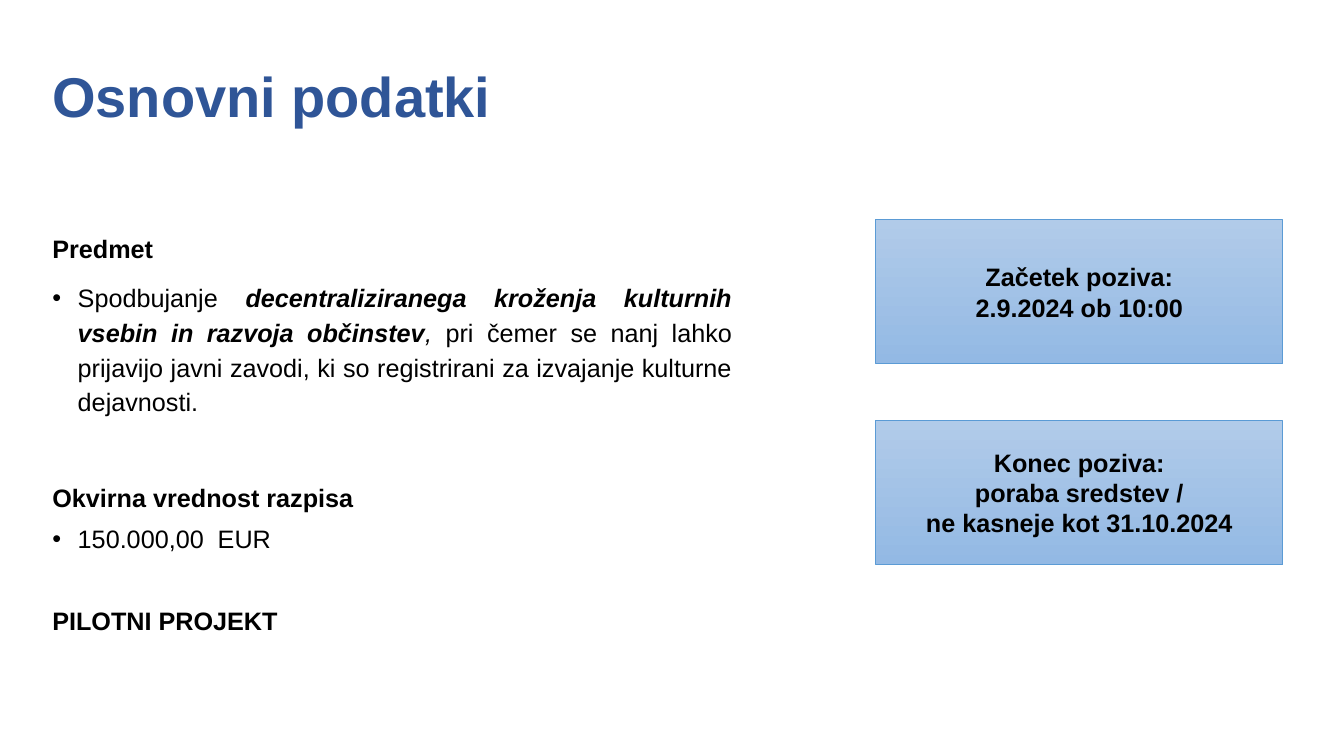
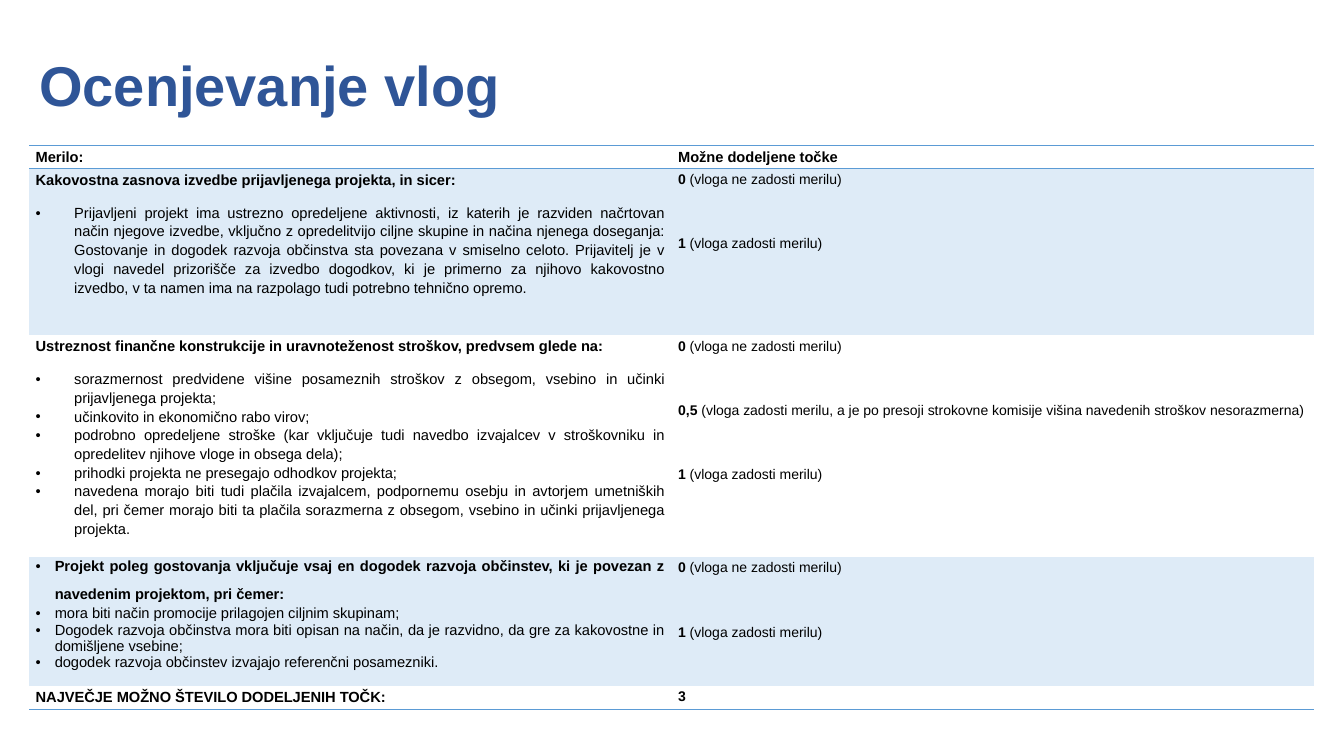
import lxml.etree
import pptx
import pptx.dml.color
import pptx.enum.shapes
import pptx.enum.text
import pptx.oxml.ns
import pptx.util

Cm = pptx.util.Cm
Pt = pptx.util.Pt
RGBColor = pptx.dml.color.RGBColor
ALIGN = pptx.enum.text.PP_ALIGN
ANCHOR = pptx.enum.text.MSO_ANCHOR
qn = pptx.oxml.ns.qn

FONT = "Arial"
BLACK = RGBColor(0x00, 0x00, 0x00)
TITLE_BLUE = RGBColor(0x2F, 0x55, 0x97)
LINE_BLUE = RGBColor(0x5B, 0x9B, 0xD5)
BAND_BLUE = RGBColor(0xDE, 0xEB, 0xF7)
BOX_TOP = RGBColor(0xB1, 0xCB, 0xE9)
BOX_BOTTOM = RGBColor(0x93, 0xB9, 0xE4)
PLAIN_TABLE = "{2D5ABB26-0587-4C30-8999-92F81FD0307C}"

FAILS = ("0", " (vloga ne zadosti merilu)")
MEETS = ("1", " (vloga zadosti merilu)")
PARTLY = ("0,5", " (vloga zadosti merilu, a je po presoji strokovne komisije "
                 "višina navedenih stroškov nesorazmerna)")

QUALITY = [
    "Prijavljeni projekt ima ustrezno opredeljene aktivnosti, iz katerih je razviden načrtovan "
    "način njegove izvedbe, vključno z opredelitvijo ciljne skupine in načina njenega doseganja: "
    "Gostovanje in dogodek razvoja občinstva sta povezana v smiselno celoto. Prijavitelj je v "
    "vlogi navedel prizorišče za izvedbo dogodkov, ki je primerno za njihovo kakovostno izvedbo, "
    "v ta namen ima na razpolago tudi potrebno tehnično opremo.",
]
FINANCE = [
    "sorazmernost predvidene višine posameznih stroškov z obsegom, vsebino in učinki "
    "prijavljenega projekta;",
    "učinkovito in ekonomično rabo virov;",
    "podrobno opredeljene stroške (kar vključuje tudi navedbo izvajalcev v stroškovniku in "
    "opredelitev njihove vloge in obsega dela);",
    "prihodki projekta ne presegajo odhodkov projekta;",
    "navedena morajo biti tudi plačila izvajalcem, podpornemu osebju in avtorjem umetniških del, "
    "pri čemer morajo biti ta plačila sorazmerna z obsegom, vsebino in učinki prijavljenega "
    "projekta.",
]
AUDIENCE = [
    "mora biti način promocije prilagojen ciljnim skupinam;",
    "Dogodek razvoja občinstva mora biti opisan na način, da je razvidno, da gre za kakovostne "
    "in domišljene vsebine;",
    "dogodek razvoja občinstev izvajajo referenčni posamezniki.",
]


def write(frame, text, *, size=18, bold=False, italic=False, color=BLACK,
          align=ALIGN.LEFT, spacing=1.0, before=0, after=0, bullet=None):
    paragraph = frame.paragraphs[-1]
    if paragraph.runs:
        paragraph = frame.add_paragraph()
    paragraph.alignment = align
    paragraph.line_spacing = spacing
    paragraph.space_before = Pt(before)
    paragraph.space_after = Pt(after)
    if bullet is not None:
        properties = paragraph._p.get_or_add_pPr()
        properties.set("marL", str(bullet))
        properties.set("indent", str(-bullet))
        lxml.etree.SubElement(properties, qn("a:buFont"), typeface=FONT)
        lxml.etree.SubElement(properties, qn("a:buChar"), char="•")
    pieces = [(text, {})] if isinstance(text, str) else text
    for words, changes in pieces:
        run = paragraph.add_run()
        run.text = words
        run.font.name = FONT
        run.font.size = Pt(changes.get("size", size))
        run.font.bold = changes.get("bold", bold)
        run.font.italic = changes.get("italic", italic)
        run.font.color.rgb = color


def add_text_area(slide, left, top, width, height, anchor):
    frame = slide.shapes.add_textbox(left, top, width, height).text_frame
    frame.word_wrap = True
    frame.vertical_anchor = anchor
    return frame


def add_title(slide, text, left, top):
    frame = add_text_area(slide, left, top, Cm(27.48), Cm(2.87), ANCHOR.MIDDLE)
    write(frame, text, size=40, bold=True, color=TITLE_BLUE, spacing=0.9)


def add_call_summary(slide, left, top, width, height):
    frame = add_text_area(slide, left, top, width, height, ANCHOR.TOP)
    indent = Cm(0.64)
    write(frame, "Predmet", bold=True, spacing=0.9)
    write(frame, [
        ("Spodbujanje ", {}),
        ("decentraliziranega kroženja kulturnih vsebin in razvoja občinstev",
         {"bold": True, "italic": True}),
        (", ", {"italic": True}),
        ("pri čemer se nanj lahko prijavijo javni zavodi, ki so registrirani za izvajanje "
         "kulturne dejavnosti.", {}),
    ], align=ALIGN.JUSTIFY, spacing=1.15, before=10, after=10, bullet=indent)
    write(frame, "Okvirna vrednost razpisa", bold=True, spacing=0.9, before=39)
    write(frame, "150.000,00  EUR", spacing=0.9, before=10, bullet=indent)
    write(frame, "PILOTNI PROJEKT", bold=True, spacing=0.9, before=39)


def add_date_box(slide, lines, left, top, width, height):
    box = slide.shapes.add_shape(
        pptx.enum.shapes.MSO_SHAPE.RECTANGLE, left, top, width, height)
    box.shadow.inherit = False
    box.fill.gradient()
    box.fill.gradient_angle = 270
    for stop, color in zip(box.fill.gradient_stops, (BOX_TOP, BOX_BOTTOM)):
        stop.color.rgb = color
    box.line.color.rgb = LINE_BLUE
    box.line.width = Pt(0.5)
    frame = box.text_frame
    frame.word_wrap = True
    frame.vertical_anchor = ANCHOR.MIDDLE
    for line in lines:
        write(frame, line, bold=True, align=ALIGN.CENTER)


def add_date_column(slide, left, top, width, height, gap):
    dates = [
        ["Začetek poziva:", "2.9.2024 ob 10:00"],
        ["Konec poziva:", "poraba sredstev /", "ne kasneje kot 31.10.2024"],
    ]
    for index, lines in enumerate(dates):
        add_date_box(slide, lines, left, top + index * (height + gap), width, height)


def rule_cell(cell, *sides):
    properties = cell._tc.get_or_add_tcPr()
    for side in sides:
        line = lxml.etree.SubElement(properties, qn("a:" + side), w=str(Pt(1)))
        fill = lxml.etree.SubElement(line, qn("a:solidFill"))
        lxml.etree.SubElement(fill, qn("a:srgbClr"), val=str(LINE_BLUE))


def write_label(cell, text, size=10.5):
    write(cell.text_frame, text, size=size, bold=True, spacing=1.15)


def write_criterion(cell, heading, points):
    frame = cell.text_frame
    write(frame, heading, size=10.5, bold=True, align=ALIGN.JUSTIFY, spacing=1.15, after=10)
    for point in points:
        write(frame, point, size=10.5, align=ALIGN.JUSTIFY, spacing=1.15, bullet=Cm(0.97))


def write_audience_criterion(cell):
    heading = [
        ("Projekt poleg gostovanja vključuje vsaj en dogodek razvoja občinstev, ki je povezan "
         "z navedenim projektom, pri čemer:", {"bold": True}),
        (" ", {"size": 20}),
    ]
    for point in [heading] + AUDIENCE:
        write(cell.text_frame, point, size=10.5, align=ALIGN.JUSTIFY, bullet=Cm(0.48))


def write_scores(cell, scores):
    for index, (points, meaning) in enumerate(scores):
        write(cell.text_frame, [(points, {"bold": True}), (meaning, {})],
              size=10, spacing=1.15, before=33 if index else 0)


def add_scoring_table(slide, left, top, width, row_heights):
    table = slide.shapes.add_table(
        len(row_heights), 2, left, top, width, sum(row_heights)).table
    table.first_row = False
    table.horz_banding = False
    table._tbl.tblPr.find(qn("a:tableStyleId")).text = PLAIN_TABLE
    for column in table.columns:
        column.width = width // 2
    ruled = {0: ("lnT", "lnB"), len(row_heights) - 1: ("lnB",)}
    for index, height in enumerate(row_heights):
        table.rows[index].height = height
        for cell in table.rows[index].cells:
            cell.margin_left = cell.margin_right = Cm(0.16)
            cell.margin_top, cell.margin_bottom = Cm(0.03), Cm(0)
            rule_cell(cell, *ruled.get(index, ()))
            if index % 2:
                cell.fill.solid()
                cell.fill.fore_color.rgb = BAND_BLUE
            else:
                cell.fill.background()

    write_label(table.cell(0, 0), "Merilo:")
    write_label(table.cell(0, 1), "Možne dodeljene točke")
    write_criterion(table.cell(1, 0),
                    "Kakovostna zasnova izvedbe prijavljenega projekta, in sicer:", QUALITY)
    write_criterion(table.cell(2, 0),
                    "Ustreznost finančne konstrukcije in uravnoteženost stroškov, "
                    "predvsem glede na:", FINANCE)
    write_audience_criterion(table.cell(3, 0))
    for row, scores in enumerate([(FAILS, MEETS), (FAILS, PARTLY, MEETS), (FAILS, MEETS)], 1):
        write_scores(table.cell(row, 1), scores)
    write_label(table.cell(4, 0), "NAJVEČJE MOŽNO ŠTEVILO DODELJENIH TOČK:")
    write_label(table.cell(4, 1), "3", size=10)


def build_basics(slide):
    add_title(slide, "Osnovni podatki", Cm(1.07), Cm(1.07))
    add_call_summary(slide, Cm(1.07), Cm(5.84), Cm(17.63), Cm(10.5))
    add_date_column(slide, Cm(22.07), Cm(5.54), Cm(10.26), Cm(3.63), Cm(1.43))


def build_scoring(slide):
    add_title(slide, "Ocenjevanje vlog", Cm(0.74), Cm(0.79))
    add_scoring_table(slide, Cm(0.74), Cm(3.66), Cm(32.38),
                      [Cm(0.59), Cm(4.19), Cm(5.59), Cm(3.25), Cm(0.59)])


def main():
    deck = pptx.Presentation()
    deck.slide_width, deck.slide_height = Cm(33.87), Cm(19.05)
    for build in (build_basics, build_scoring):
        build(deck.slides.add_slide(deck.slide_layouts[6]))
    deck.save("out.pptx")


if __name__ == "__main__":
    main()
